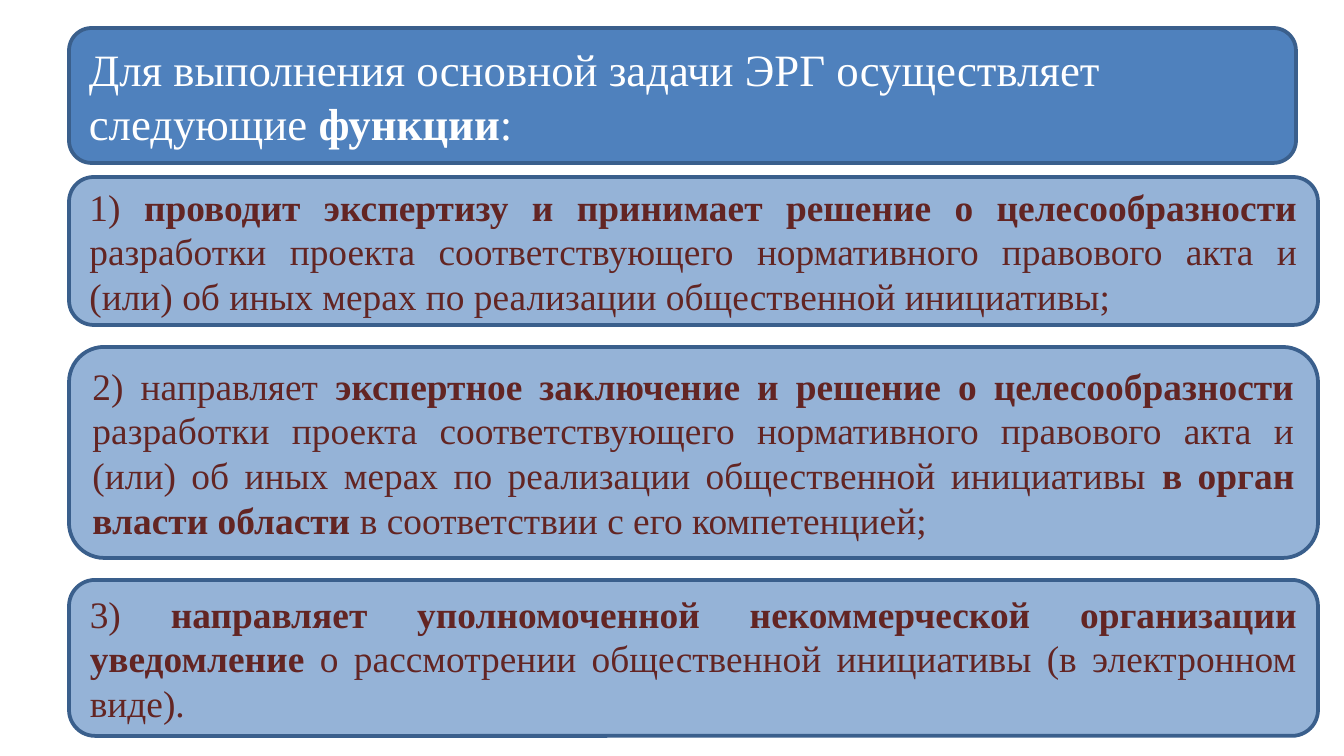
"""Build a slide listing the functions of the expert working group."""
from dataclasses import dataclass

from pptx import Presentation
from pptx.dml.color import RGBColor
from pptx.enum.shapes import MSO_SHAPE
from pptx.enum.text import MSO_ANCHOR, PP_ALIGN
from pptx.util import Pt

HEADING = [
    ("Для выполнения основной задачи ЭРГ осуществляет следующие ", False),
    ("функции", True),
    (":", False),
]
FUNCTIONS = [
    (148, [
        ("1) ", False),
        ("проводит экспертизу и принимает решение о целесообразности ", True),
        ("разработки проекта соответствующего нормативного правового акта и (или) "
         "об иных мерах по реализации общественной инициативы;", False),
    ]),
    (211, [
        ("2) направляет ", False),
        ("экспертное заключение и решение о целесообразности ", True),
        ("разработки проекта соответствующего нормативного правового акта и (или) "
         "об иных мерах по реализации общественной инициативы ", False),
        ("в орган власти области ", True),
        ("в соответствии с его компетенцией;", False),
    ]),
    (156, [
        ("3) ", False),
        ("направляет уполномоченной некоммерческой организации уведомление ", True),
        ("о рассмотрении общественной инициативы (в электронном виде).", False),
    ]),
]


@dataclass(frozen=True)
class Style:
    fill: str
    color: str
    size: int
    align: PP_ALIGN


@dataclass(frozen=True)
class Theme:
    font: str = "Times New Roman"
    outline: str = "3A5F8C"
    outline_width: int = 2
    heading: Style = Style("4F81BD", "FFFFFF", 24, PP_ALIGN.LEFT)
    item: Style = Style("95B3D7", "632523", 20, PP_ALIGN.JUSTIFY)


THEME = Theme()
PAGE_WIDTH, PAGE_HEIGHT = 1344, 756
LEFT = 69
HEADING_TOP, HEADING_WIDTH, HEADING_HEIGHT = 28, 1227, 135
ITEMS_TOP, ITEM_WIDTH, ITEM_GAP = 177, 1249, 22


def px(length):
    return round(length * 914400 / 134.4)


def add_panel(page, top, width, height, spans, style):
    box = page.shapes.add_shape(
        MSO_SHAPE.ROUNDED_RECTANGLE, px(LEFT), px(top), px(width), px(height))
    box.shadow.inherit = False
    box.fill.solid()
    box.fill.fore_color.rgb = RGBColor.from_string(style.fill)
    box.line.color.rgb = RGBColor.from_string(THEME.outline)
    box.line.width = Pt(THEME.outline_width)
    frame = box.text_frame
    frame.word_wrap = True
    frame.vertical_anchor = MSO_ANCHOR.MIDDLE
    para = frame.paragraphs[0]
    para.alignment = style.align
    para.font.name = THEME.font
    para.font.size = Pt(style.size)
    para.font.color.rgb = RGBColor.from_string(style.color)
    for text, bold in spans:
        span = para.add_run()
        span.text = text
        span.font.bold = bold


def main():
    deck = Presentation()
    deck.slide_width, deck.slide_height = px(PAGE_WIDTH), px(PAGE_HEIGHT)
    page = deck.slides.add_slide(deck.slide_layouts[6])
    add_panel(page, HEADING_TOP, HEADING_WIDTH, HEADING_HEIGHT, HEADING, THEME.heading)
    top = ITEMS_TOP
    for height, spans in FUNCTIONS:
        add_panel(page, top, ITEM_WIDTH, height, spans, THEME.item)
        top += height + ITEM_GAP
    deck.save("out.pptx")


if __name__ == "__main__":
    main()
